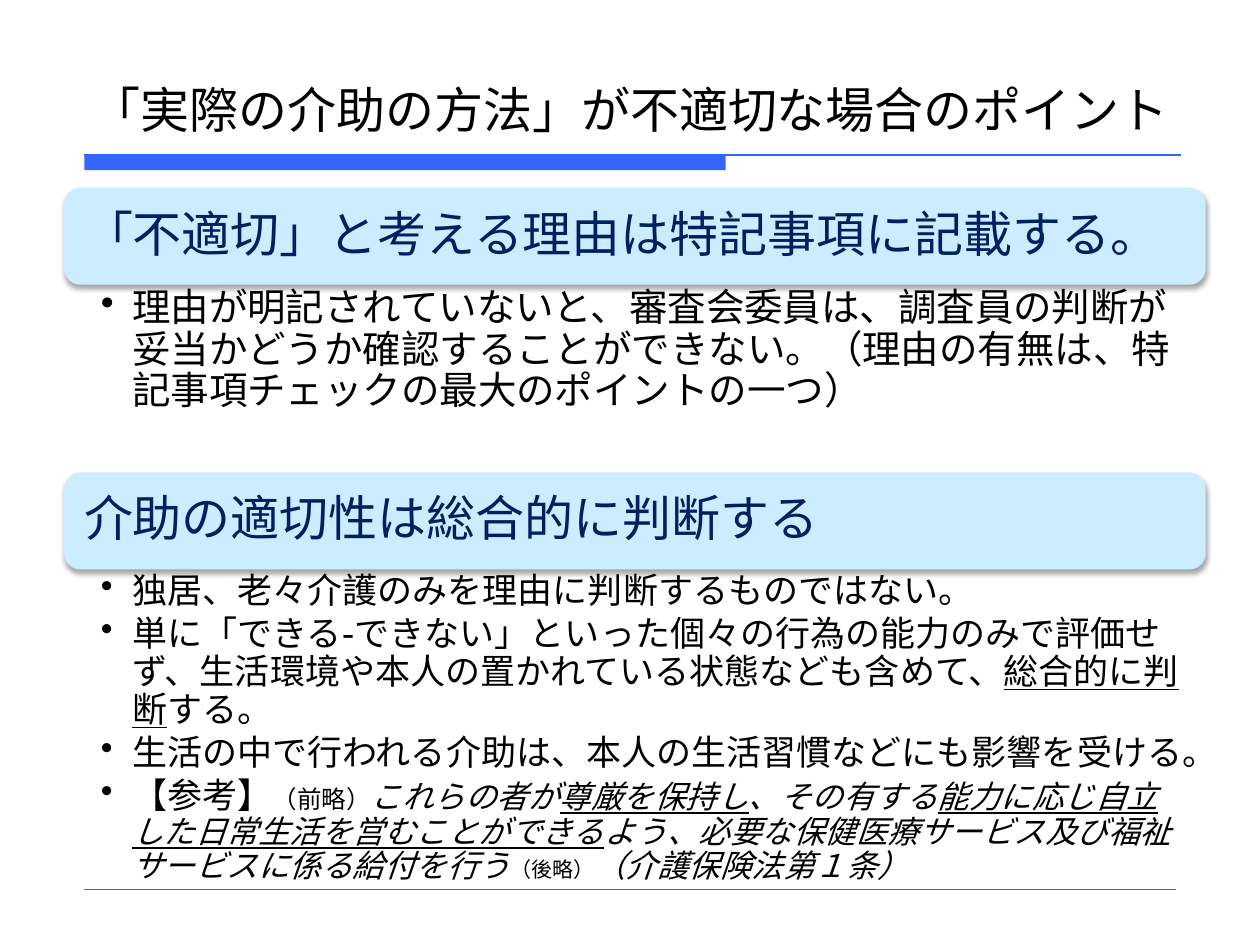
from lxml import etree
from pptx import Presentation
from pptx.dml.color import RGBColor
from pptx.enum.shapes import MSO_CONNECTOR, MSO_SHAPE
from pptx.enum.text import MSO_ANCHOR, PP_ALIGN
from pptx.oxml.ns import qn
from pptx.util import Inches, Pt

LINE = MSO_CONNECTOR.STRAIGHT
RECT, ROUND = MSO_SHAPE.RECTANGLE, MSO_SHAPE.ROUNDED_RECTANGLE
BOTTOM, MIDDLE, TOP = MSO_ANCHOR.BOTTOM, MSO_ANCHOR.MIDDLE, MSO_ANCHOR.TOP
LEFT = PP_ALIGN.LEFT

FONT = "DejaVu Sans"
COLORS = {"rule": "3366FF", "band": "CCECFF", "head": "002060",
          "text": "000000"}

TITLE = "「実際の介助の方法」が不適切な場合のポイント"
REASON = [
    [("理由が明記されていないと、審査会委員は、調査員の判断が妥当かどうか"
      "確認することができない。（理由の有無は、特記事項チェックの最大の"
      "ポイントの一つ）",)],
]
# Each run: text, then optional size and style letters (i italic, u underline)
OVERALL = [
    [("独居、老々介護のみを理由に判断するものではない。",)],
    [("単に「できる-できない」といった個々の行為の能力のみで評価せず、"
      "生活環境や本人の置かれている状態なども含めて、",),
     ("総合的に判断", 20, "u"), ("する。",)],
    [("生活の中で行われる介助は、本人の生活習慣などにも影響を受ける。",)],
    [("【参考】",), ("（前略）", 14), ("これらの者が", 18, "i"),
     ("尊厳を保持し", 18, "iu"), ("、その有する", 18, "i"),
     ("能力に応じ自立した日常生活を営むことができる", 18, "iu"),
     ("よう、必要な保健医療サービス及び福祉サービスに係る給付を行う", 18, "i"),
     ("（後略）", 12), ("（介護保険法第１条）", 18, "i")],
]
# Top of the heading band, heading, body height, body size, body runs
SECTIONS = [
    (1.49, "「不適切」と考える理由は特記事項に記載する。", 1.49, 22, REASON),
    (3.75, "介助の適切性は総合的に判断する", 2.96, 20, OVERALL),
]


def rgb(name):
    return RGBColor.from_string(COLORS[name])


def set_font(font, size, color):
    font.name, font.size = FONT, Pt(size)
    font.color.rgb = rgb(color)


def set_frame(frame, anchor, left, top, right, bottom):
    frame.word_wrap = True
    frame.vertical_anchor = anchor
    frame.margin_left, frame.margin_top = Inches(left), Inches(top)
    frame.margin_right, frame.margin_bottom = Inches(right), Inches(bottom)


def add_rule(slide, y, end, width):
    rule = slide.shapes.add_connector(
        LINE, Inches(0.67), Inches(y), Inches(end), Inches(y))
    rule.line.color.rgb = rgb("rule")
    rule.line.width = Pt(width)
    etree.SubElement(rule._element.spPr, qn("a:effectLst"))


def add_block(slide, kind, box, color):
    block = slide.shapes.add_shape(kind, *map(Inches, box))
    block.shadow.inherit = False
    block.fill.solid()
    block.fill.fore_color.rgb = rgb(color)
    block.line.fill.background()
    return block


def add_shadow(shape):
    """Put a soft shadow just below the shape."""
    effects = shape._element.spPr.find(qn("a:effectLst"))
    outer = etree.SubElement(
        effects, qn("a:outerShdw"), blurRad=str(Pt(3.1)), dist=str(Pt(1.8)),
        dir="5400000", rotWithShape="0")
    shade = etree.SubElement(outer, qn("a:srgbClr"), val=COLORS["text"])
    etree.SubElement(shade, qn("a:alpha"), val="35000")


def add_bullet(para):
    props = para._p.get_or_add_pPr()
    props.set("marL", str(Inches(0.25)))
    props.set("indent", str(Inches(-0.25)))
    char = etree.Element(qn("a:buChar"), char="•")
    props.insert_element_before(char, "a:tabLst", "a:defRPr", "a:extLst")


def add_title(slide):
    title = slide.shapes.title
    title.left, title.top = Inches(0.63), Inches(0.33)
    title.width, title.height = Inches(8.75), Inches(0.82)
    title.text = TITLE
    set_frame(title.text_frame, BOTTOM, 0.1, 0.05, 0.1, 0.05)
    para = title.text_frame.paragraphs[0]
    para.alignment = LEFT
    set_font(para.font, 28, "text")


def add_head(slide, top, text):
    band = add_block(slide, ROUND, (0.51, top, 9.06, 0.77), "band")
    add_shadow(band)
    frame = band.text_frame
    set_frame(frame, MIDDLE, 0.12, 0.12, 0.12, 0.12)
    para = frame.paragraphs[0]
    para.text = text
    para.alignment = LEFT
    para.line_spacing = 0.9
    set_font(para.font, 28, "head")


def add_body(slide, top, height, size, items):
    box = slide.shapes.add_textbox(
        Inches(0.51), Inches(top), Inches(9.06), Inches(height))
    frame = box.text_frame
    set_frame(frame, TOP, 0.29, 0.03, 0.16, 0.03)
    for i, runs in enumerate(items):
        para = frame.add_paragraph() if i else frame.paragraphs[0]
        para.line_spacing = 0.9
        para.space_after = Pt(3)
        set_font(para.font, size, "text")
        add_bullet(para)
        for text, *style in runs:
            add_run(para, text, *style)


def add_run(para, text, size=None, marks=""):
    run = para.add_run()
    run.text = text
    if size:
        run.font.size = Pt(size)
    if "i" in marks:
        run.font.italic = True
    if "u" in marks:
        run.font.underline = True


def main():
    deck = Presentation()
    deck.slide_width, deck.slide_height = Inches(10), Inches(7.5)
    slide = deck.slides.add_slide(deck.slide_layouts[5])
    add_block(slide, RECT, (0.67, 1.23, 5.09, 0.12), "rule")
    add_rule(slide, 1.23, 9.37, 0.75)
    add_rule(slide, 7.06, 9.33, 0.25)
    add_title(slide)
    for top, head, height, size, items in SECTIONS:
        add_head(slide, top, head)
        add_body(slide, top + 0.77, height, size, items)
    deck.save("out.pptx")


if __name__ == "__main__":
    main()
